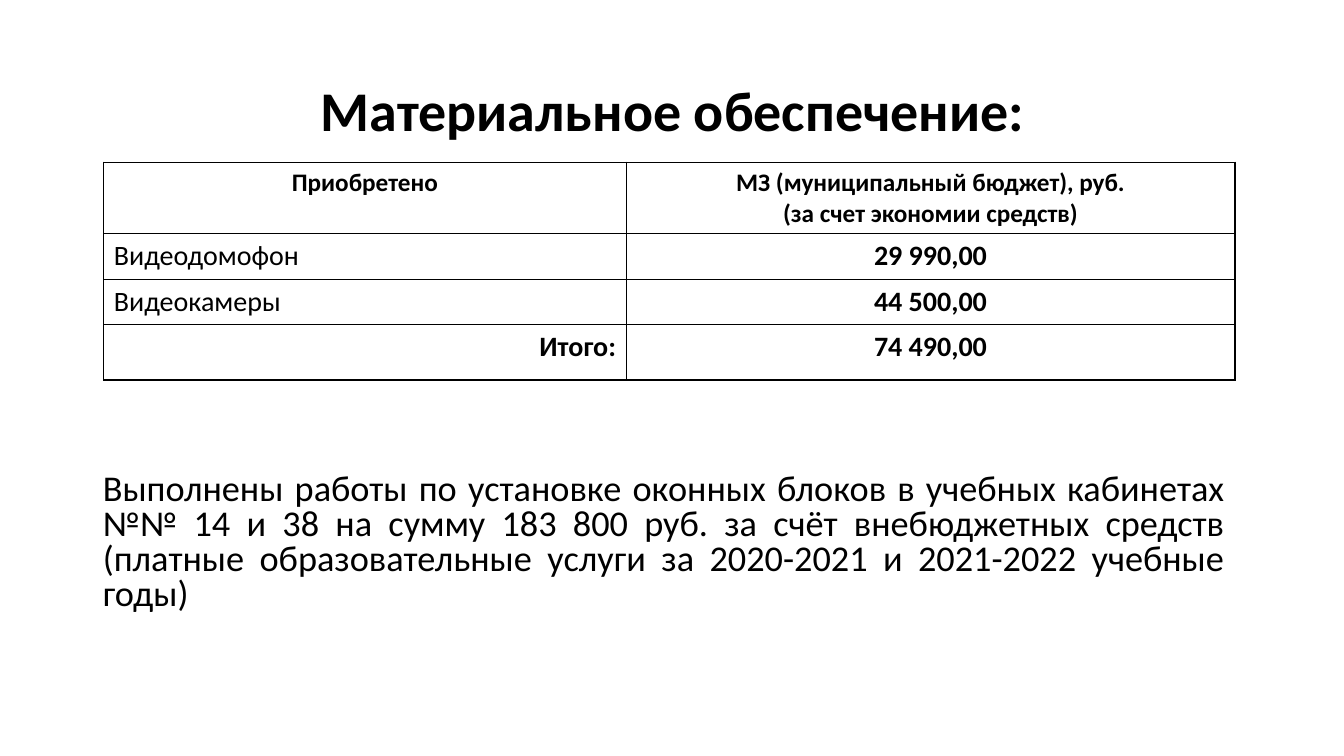
from pptx import Presentation
from pptx.dml.color import RGBColor
from pptx.enum.text import MSO_ANCHOR as Anchor, MSO_AUTO_SIZE as Fit, PP_ALIGN as Align
from pptx.oxml import parse_xml
from pptx.oxml.ns import nsdecls
from pptx.util import Inches, Pt

BLACK = "000000"
TITLE = "Материальное обеспечение:"
NOTE = (
    "Выполнены работы по установке оконных блоков в учебных кабинетах "
    "№№ 14 и 38 на сумму 183 800 руб. за счёт внебюджетных средств "
    "(платные образовательные услуги за 2020-2021 и 2021-2022 учебные годы)"
)
ROWS = [
    ("Приобретено", "МЗ (муниципальный бюджет), руб.\n(за счет экономии средств)"),
    ("Видеодомофон", "29 990,00"),
    ("Видеокамеры", "44 500,00"),
    ("Итого:", "74 490,00"),
]
WIDTHS = [5.18, 6.04]
HEIGHTS = [0.7, 0.45, 0.45, 0.55]
FIRST = [Align.CENTER, Align.LEFT, Align.LEFT, Align.RIGHT]


def color(code):
    return RGBColor.from_string(code)


def write(frame, text, size, bold=False, align=Align.CENTER, line=1.0, before=0):
    frame.text = text
    for para in frame.paragraphs:
        para.alignment = align
        para.line_spacing = line
        para.space_before = Pt(before)
        for run in para.runs:
            font = run.font
            font.name, font.size, font.bold = "Calibri", Pt(size), bold
            font.color.rgb = color(BLACK)


def place(shape, left, top, width, height, anchor):
    shape.left, shape.top = Inches(left), Inches(top)
    shape.width, shape.height = Inches(width), Inches(height)
    frame = shape.text_frame
    frame.word_wrap = True
    frame.auto_size = Fit.NONE
    frame.vertical_anchor = anchor
    return frame


def border(cell):
    props = cell._tc.get_or_add_tcPr()
    for pos, side in enumerate(("lnL", "lnR", "lnT", "lnB")):
        props.insert(pos, parse_xml(
            f'<a:{side} {nsdecls("a")} w="12700"><a:solidFill>'
            f'<a:srgbClr val="{BLACK}"/></a:solidFill></a:{side}>'
        ))


def main():
    deck = Presentation()
    deck.slide_width, deck.slide_height = Inches(13.33), Inches(7.5)
    slide = deck.slides.add_slide(deck.slide_layouts[1])

    frame = place(slide.shapes.title, 0.92, 0.4, 11.5, 1.45, Anchor.MIDDLE)
    write(frame, TITLE, 40, bold=True, line=0.9)

    frame = place(slide.placeholders[1], 0.92, 4.65, 11.33, 1.52, Anchor.TOP)
    write(frame, NOTE, 25.9, align=Align.JUSTIFY, line=0.8, before=10)
    props = frame.paragraphs[0]._p.get_or_add_pPr()
    props.set("marL", "0")
    props.set("indent", "0")
    props.append(parse_xml(f'<a:buNone {nsdecls("a")}/>'))

    table = slide.shapes.add_table(
        len(ROWS), len(WIDTHS), Inches(1.03), Inches(1.61),
        Inches(sum(WIDTHS)), Inches(sum(HEIGHTS)),
    ).table
    table.first_row = table.horz_banding = False
    for col, width in zip(table.columns, WIDTHS):
        col.width = Inches(width)
    for row, height in zip(table.rows, HEIGHTS):
        row.height = Inches(height)
    for r, texts in enumerate(ROWS):
        for c, text in enumerate(texts):
            cell = table.cell(r, c)
            cell.fill.background()
            border(cell)
            align = Align.CENTER if c else FIRST[r]
            write(cell.text_frame, text, 20 if r else 18,
                  bold=align != Align.LEFT, align=align)

    deck.save("out.pptx")


if __name__ == "__main__":
    main()
